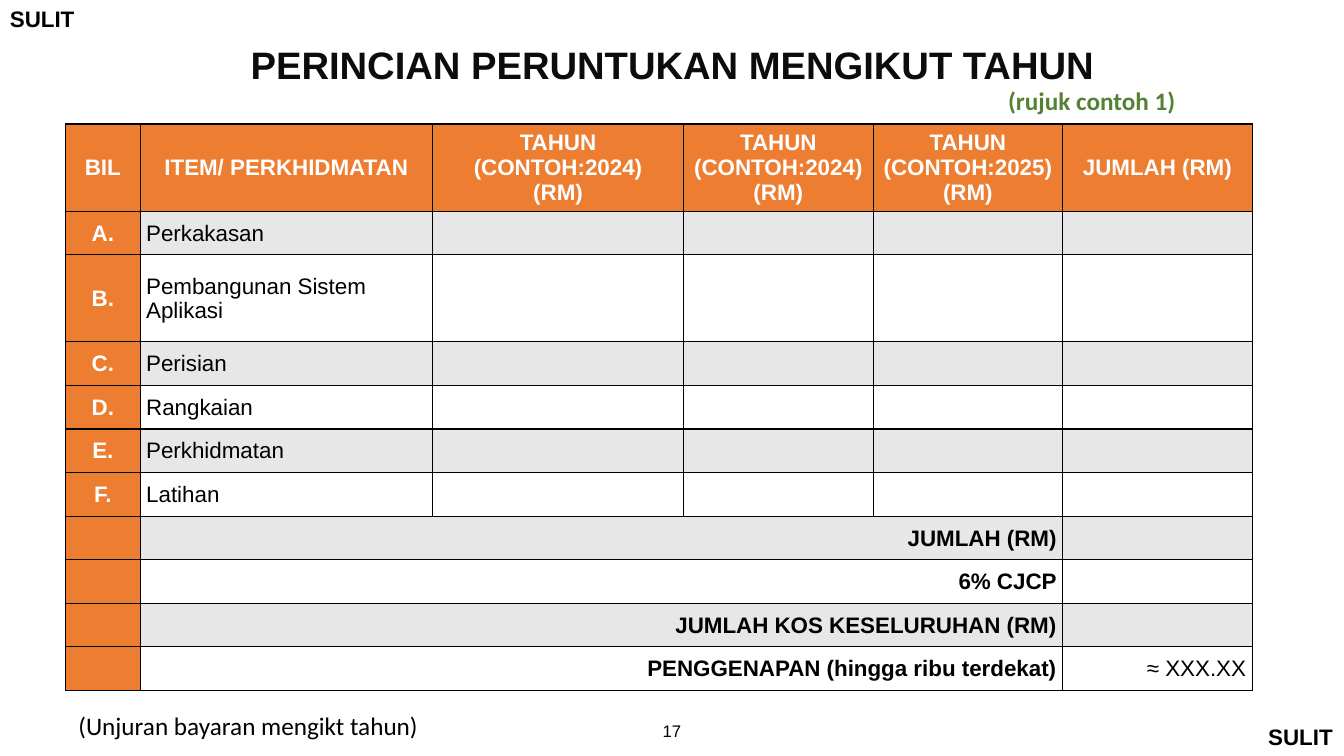
"""Build the slide on yearly allocation details."""
from dataclasses import dataclass

from lxml.etree import SubElement
from pptx import Presentation
from pptx.dml.color import RGBColor as Color
from pptx.enum.text import MSO_ANCHOR as Anchor, MSO_AUTO_SIZE as AutoSize, PP_ALIGN as Align
from pptx.oxml.ns import qn
from pptx.util import Inches, Pt


@dataclass(frozen=True)
class Theme:
    heading_font: str = "Arial"
    note_font: str = "Calibri"
    black: str = "000000"
    title: str = "0C0C0C"
    white: str = "FFFFFF"
    orange: str = "ED7D31"
    gray: str = "E7E7E7"
    green: str = "548235"
    title_size: float = 27.3
    note_size: float = 18
    table_size: float = 16
    number_size: float = 12
    border: float = 1


THEME = Theme()


@dataclass(frozen=True)
class Style:
    size: float = THEME.table_size
    color: str = THEME.black
    bold: bool = False
    font: str = THEME.heading_font
    align: Align = Align.LEFT


@dataclass(frozen=True)
class Label:
    text: str
    left: float
    top: float
    width: float
    height: float
    style: Style
    wrap: bool = True


MARK = Style(bold=True)
NUMBER = Style(THEME.number_size, align=Align.CENTER)
REFERENCE = Style(THEME.note_size, THEME.green, True, THEME.note_font)
NOTE = Style(THEME.note_size, font=THEME.note_font)
TITLE = Style(THEME.title_size, THEME.title, True, align=Align.CENTER)
HEADER = Style(color=THEME.white, bold=True, align=Align.CENTER)
ITEM = Style()
TOTAL = Style(bold=True, align=Align.RIGHT)
AMOUNT = Style(align=Align.RIGHT)

LABELS = [
    Label("SULIT", 0, 0, 0.85, 0.37, MARK, False),
    Label("SULIT", 12.48, 7.13, 0.85, 0.37, MARK, False),
    Label("17", 6.4, 7.1, 0.53, 0.4, NUMBER),
    Label("(rujuk contoh 1)", 9.9, 0.8, 1.88, 0.4, REFERENCE, False),
    Label("(Unjuran bayaran mengikt tahun)", 0.68, 7, 4.8, 0.4, NOTE),
]
HEADINGS = ["BIL", "ITEM/ PERKHIDMATAN"]
HEADINGS += [f"TAHUN\n(CONTOH:{year})\n(RM)" for year in (2024, 2024, 2025)]
HEADINGS += ["JUMLAH (RM)"]
ITEMS = ["Perkakasan", "Pembangunan Sistem Aplikasi", "Perisian", "Rangkaian",
         "Perkhidmatan", "Latihan"]
TOTALS = ["JUMLAH (RM)", "6% CJCP", "JUMLAH KOS KESELURUHAN (RM)",
          "PENGGENAPAN (hingga ribu terdekat)"]
COLUMN_WIDTHS = [0.74, 2.9, 2.49, 1.88, 1.88, 1.88]
TABLE_LEFT, TABLE_TOP, TABLE_HEIGHT = 0.65, 1.23, 5.62
ROW_UNITS = [2, 1, 2] + [1] * 8


def write(frame, text: str, style: Style) -> None:
    frame.text = text
    for para in frame.paragraphs:
        para.alignment = style.align
        font = para.font
        font.name, font.size, font.bold = style.font, Pt(style.size), style.bold
        font.color.rgb = Color.from_string(style.color)


def add_title(slide, text: str) -> None:
    title = slide.shapes.title
    title.left, title.top = Inches(2.19), Inches(0.38)
    title.width, title.height = Inches(8.95), Inches(0.6)
    frame = title.text_frame
    write(frame, text, TITLE)
    frame.auto_size = AutoSize.NONE
    frame.vertical_anchor = Anchor.MIDDLE
    frame.paragraphs[0].line_spacing = 0.8


def add_label(slide, label: Label) -> None:
    box = slide.shapes.add_textbox(Inches(label.left), Inches(label.top),
                                   Inches(label.width), Inches(label.height))
    box.text_frame.word_wrap = label.wrap
    write(box.text_frame, label.text, label.style)


def format_cell(cell, fill: str) -> None:
    cell.margin_left = cell.margin_right = Inches(0.06)
    cell.margin_top, cell.margin_bottom = Inches(0.01), 0
    cell.vertical_anchor = Anchor.MIDDLE
    properties = cell._tc.get_or_add_tcPr()
    for side in ("a:lnL", "a:lnR", "a:lnT", "a:lnB"):
        line = SubElement(properties, qn(side), w=str(Pt(THEME.border)))
        solid = SubElement(line, qn("a:solidFill"))
        SubElement(solid, qn("a:srgbClr"), val=THEME.black)
    cell.fill.solid()
    cell.fill.fore_color.rgb = Color.from_string(fill)


def add_cost_table(slide) -> None:
    table = slide.shapes.add_table(
        len(ROW_UNITS), len(COLUMN_WIDTHS), Inches(TABLE_LEFT), Inches(TABLE_TOP),
        Inches(sum(COLUMN_WIDTHS)), Inches(TABLE_HEIGHT)).table
    table.first_row = table.horz_banding = False
    for column, width in zip(table.columns, COLUMN_WIDTHS):
        column.width = Inches(width)
    for row_index, (row, units) in enumerate(zip(table.rows, ROW_UNITS)):
        row.height = Inches(TABLE_HEIGHT * units / sum(ROW_UNITS))
        band = THEME.gray if row_index % 2 else THEME.white
        for column_index, cell in enumerate(row.cells):
            is_heading = row_index == 0 or column_index == 0
            format_cell(cell, THEME.orange if is_heading else band)
    for column_index, heading in enumerate(HEADINGS):
        write(table.cell(0, column_index).text_frame, heading, HEADER)
    for row_index, (letter, item) in enumerate(zip("ABCDEF", ITEMS), 1):
        write(table.cell(row_index, 0).text_frame, f"{letter}.", HEADER)
        write(table.cell(row_index, 1).text_frame, item, ITEM)
    for row_index, total in enumerate(TOTALS, len(ITEMS) + 1):
        table.cell(row_index, 1).merge(table.cell(row_index, 4))
        write(table.cell(row_index, 1).text_frame, total, TOTAL)
    write(table.cell(len(ROW_UNITS) - 1, 5).text_frame, "≈ XXX.XX", AMOUNT)


def main() -> None:
    deck = Presentation()
    deck.slide_width, deck.slide_height = Inches(13.33), Inches(7.5)
    page = deck.slides.add_slide(deck.slide_layouts[5])
    add_title(page, "PERINCIAN PERUNTUKAN MENGIKUT TAHUN")
    add_cost_table(page)
    for label in LABELS:
        add_label(page, label)
    deck.save("out.pptx")


if __name__ == "__main__":
    main()
